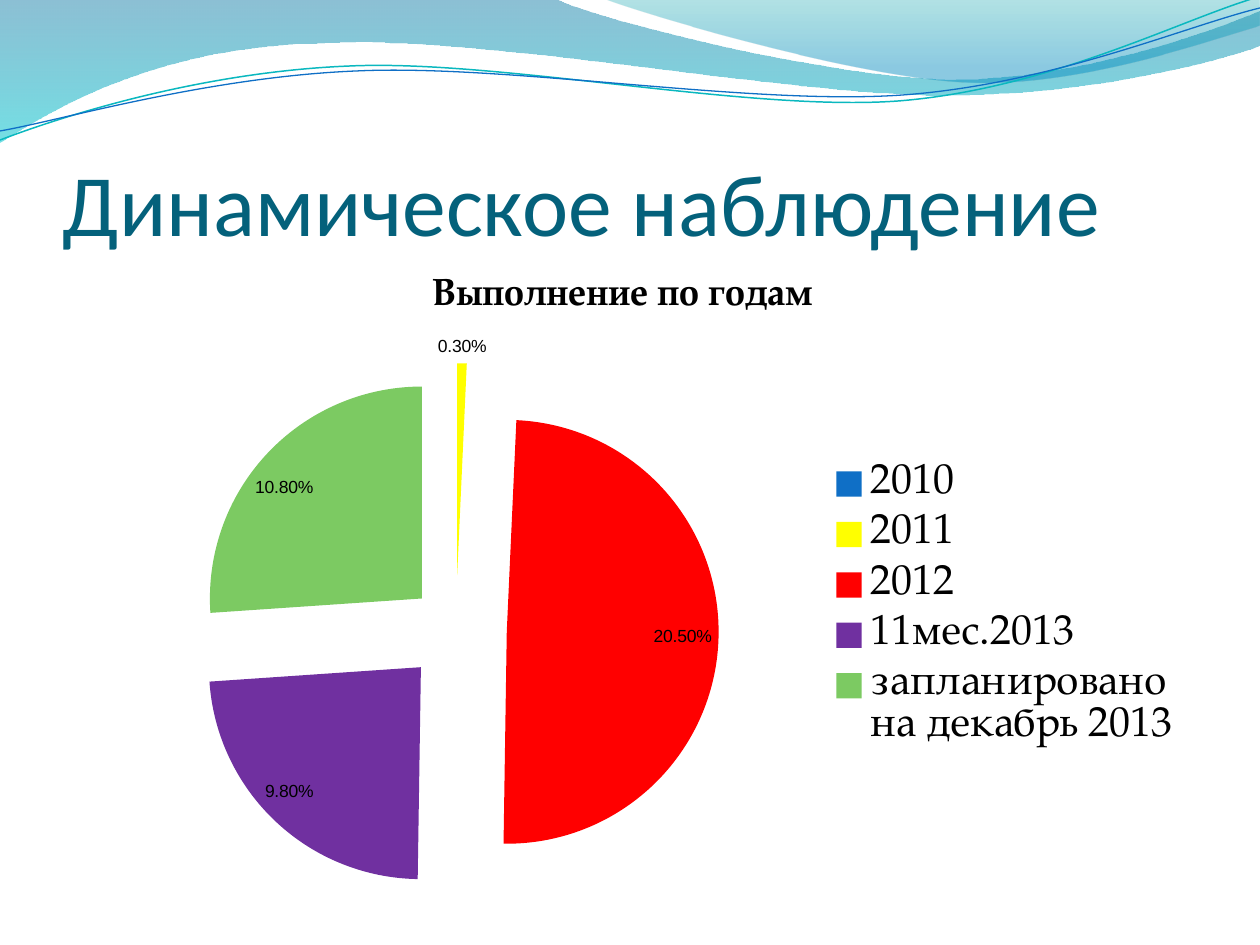
import pptx
import pptx.chart.data
import pptx.dml.color
import pptx.enum.chart
import pptx.enum.text
import pptx.oxml
import pptx.oxml.ns
import pptx.util

PX = 7258  # EMU in one px, at 126 px to the inch
COLORS = {
    "title": "04617B", "text": "000000", "blue": "0F6FC6", "teal": "0AB8BF",
    "yellow": "FFFF00", "red": "FF0000", "purple": "7030A0", "green": "7CCA62",
}
HEADING = "Динамическое наблюдение"
CHART_TITLE = "Выполнение по годам"
# Category, value, colour, distance from the centre in percent of the radius
SLICES = [
    ("2010", 0, "blue", 0),
    ("2011", 0.003, "yellow", 26),
    ("2012", 0.205, "red", 24),
    ("11мес.2013", 0.098, "purple", 24),
    ("запланировано на декабрь 2013", 0.108, "green", 22),
]
SERIES_EXPLOSION = 3
PLOT_AREA = {"x": 0.154, "y": 0.175, "w": 0.385, "h": 0.722}
TITLE_AREA = {"x": 0.32, "y": 0}

# A step with one point is a straight line, with three points a Bezier curve.
# Gradient stops: position, colour, opacity in percent.
WAVES = [
    ([(0, "0074A1", 45), (1, "00C6CF", 55)], (0, 0), [
        [(554, -1)],
        [(600, 21), (837, 79), (955, 79)],
        [(1075, 79), (1207, 33), (1260, 11)],
        [(1261, 45)],
        [(1239, 55), (1096, 96), (940, 95)],
        [(784, 95), (481, 35), (324, 43)],
        [(163, 45), (58, 105), (-1, 142)],
    ]),
    ([(0, "00A1A9", 30), (0.8, "008BBF", 45)], (604, -1), [
        [(641, 14), (859, 78), (969, 82)],
        [(1079, 87), (1211, 40), (1260, 26)],
        [(1260, 0)],
    ]),
]
LINES = [
    ("teal", 0.85, (0, 140), [
        [(60, 117), (199, 72), (349, 66)],
        [(498, 59), (747, 112), (898, 101)],
        [(1050, 89), (1182, 19), (1258, -3)],
    ]),
    ("blue", 0.75, (0, 131), [
        [(59, 121), (207, 77), (357, 71)],
        [(508, 64), (752, 106), (903, 95)],
        [(1053, 84), (1186, 26), (1260, 8)],
    ]),
]


def qn(tag):
    return pptx.oxml.ns.qn(tag)


def rgb(value):
    return pptx.dml.color.RGBColor.from_string(value)


def add_outline(s, start, steps, close):
    """Draw straight steps, then bend those that have control points."""
    builder = s.shapes.build_freeform(start[0] * PX, start[1] * PX)
    builder.add_line_segments([(step[-1][0] * PX, step[-1][1] * PX) for step in steps],
                              close=close)
    sp = builder.convert_to_shape()
    sp.shadow.inherit = False
    for segment, step in zip(list(sp._element.iter(qn("a:lnTo"))), steps):
        if len(step) == 3:
            curve = segment.makeelement(qn("a:cubicBezTo"), {})
            for x, y in step:
                curve.append(curve.makeelement(
                    qn("a:pt"), {"x": str(x * PX - sp.left), "y": str(y * PX - sp.top)}))
            segment.getparent().replace(segment, curve)
    return sp


def add_wave(s, stops, start, steps):
    sp = add_outline(s, start, steps, True)
    sp.line.fill.background()
    sp.fill.gradient()
    sp.fill.gradient_angle = 270
    for stop, (position, color, _) in zip(sp.fill.gradient_stops, stops):
        stop.position = position
        stop.color.rgb = rgb(color)
    for clr, (_, _, opacity) in zip(list(sp._element.spPr.iter(qn("a:srgbClr"))), stops):
        clr.append(clr.makeelement(qn("a:alpha"), {"val": str(opacity * 1000)}))


def add_line(s, color, width, start, steps):
    sp = add_outline(s, start, steps, False)
    sp.fill.background()
    sp.line.color.rgb = rgb(COLORS[color])
    sp.line.width = pptx.util.Pt(width)


def add_title(s):
    title = s.shapes.title
    title.left, title.top, title.width, title.height = (n * PX for n in (63, 97, 1134, 157))
    tf = title.text_frame
    tf.text = HEADING
    tf.margin_left = tf.margin_right = tf.margin_bottom = 0
    tf.vertical_anchor = pptx.enum.text.MSO_ANCHOR.BOTTOM
    p = tf.paragraphs[0]
    p.alignment = pptx.enum.text.PP_ALIGN.LEFT
    p.font.name, p.font.size = "Calibri", pptx.util.Pt(50)
    p.font.color.rgb = rgb(COLORS["title"])


def set_font(font, size, name="TeX Gyre Pagella", bold=False):
    font.name, font.size, font.bold = name, pptx.util.Pt(size), bold
    font.color.rgb = rgb(COLORS["text"])


def make_layout(area, target=""):
    """Give a manual layout in fractions of the chart."""
    parts = target + '<c:xMode val="edge"/><c:yMode val="edge"/>'
    parts += "".join(f'<c:{key} val="{value}"/>' for key, value in area.items())
    return pptx.oxml.parse_xml(f'<c:layout {pptx.oxml.ns.nsdecls("c")}>'
                               f'<c:manualLayout>{parts}</c:manualLayout></c:layout>')


def place_chart_parts(chart):
    title, plot_area = chart.chart_title._element, chart._chartSpace.chart.plotArea
    for parent in (title, plot_area):
        for old in parent.findall(qn("c:layout")):
            parent.remove(old)
    title.find(qn("c:tx")).addnext(make_layout(TITLE_AREA))
    plot_area.insert(0, make_layout(PLOT_AREA, '<c:layoutTarget val="inner"/>'))


def explode(series):
    ser = series._element
    points = ser.findall(qn("c:dPt"))
    for point, (_, _, _, distance) in zip(points, SLICES):
        point.find(qn("c:spPr")).addprevious(
            point.makeelement(qn("c:explosion"), {"val": str(distance)}))
    points[0].addprevious(ser.makeelement(qn("c:explosion"), {"val": str(SERIES_EXPLOSION)}))


def add_labels(series):
    labels = series.data_labels
    labels.show_value = True
    labels.number_format = "0.00%"
    labels.number_format_is_linked = False
    labels.position = pptx.enum.chart.XL_LABEL_POSITION.BEST_FIT
    set_font(labels.font, 10, "Arial")
    for i, (_, value, _, _) in enumerate(SLICES):
        if not value:
            labels._element.insert(0, pptx.oxml.parse_xml(
                f'<c:dLbl {pptx.oxml.ns.nsdecls("c")}><c:idx val="{i}"/>'
                '<c:delete val="1"/></c:dLbl>'))


def add_pie(s):
    data = pptx.chart.data.CategoryChartData(number_format="0.00%")
    data.categories = [name for name, *_ in SLICES]
    data.add_series("Series 1", [value for _, value, *_ in SLICES])
    chart = s.shapes.add_chart(pptx.enum.chart.XL_CHART_TYPE.PIE,
                               *(n * PX for n in (63, 267, 1134, 678)), data).chart
    set_font(chart.font, 18)
    chart.has_title = True
    chart.chart_title.text_frame.text = CHART_TITLE
    set_font(chart.chart_title.text_frame.paragraphs[0].font, 21.6, bold=True)
    chart.has_legend = True
    chart.legend.position = pptx.enum.chart.XL_LEGEND_POSITION.RIGHT
    chart.legend.include_in_layout = False
    set_font(chart.legend.font, 24)
    place_chart_parts(chart)

    plot = chart.plots[0]
    plot.vary_by_categories = True
    series = plot.series[0]
    for i, (_, _, color, _) in enumerate(SLICES):
        fill = series.points[i].format.fill
        fill.solid()
        fill.fore_color.rgb = rgb(COLORS[color])
    explode(series)
    add_labels(series)


prs = pptx.Presentation()
prs.slide_width, prs.slide_height = 1260 * PX, 945 * PX
s = prs.slides.add_slide(prs.slide_layouts[5])
for wave in WAVES:
    add_wave(s, *wave)
for line in LINES:
    add_line(s, *line)
add_title(s)
add_pie(s)
prs.save("out.pptx")
